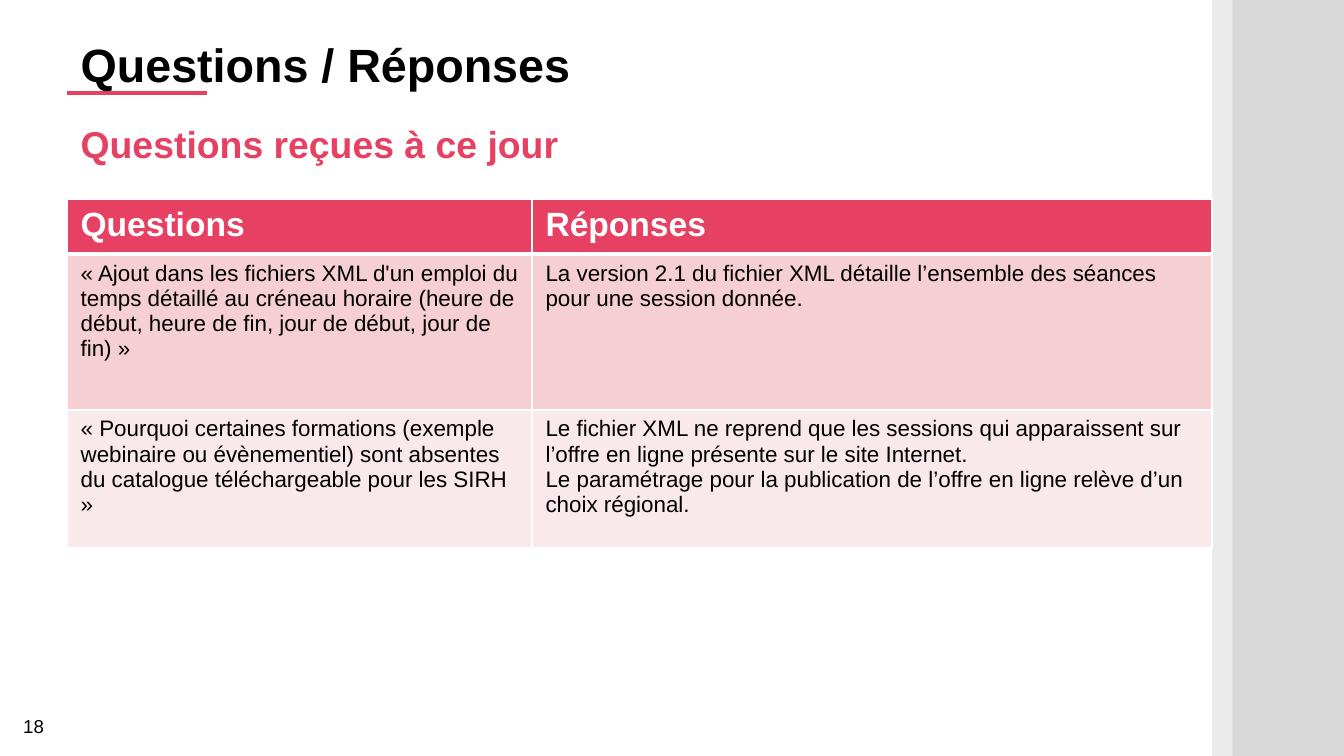
from dataclasses import dataclass

import pptx
import pptx.dml.color
import pptx.enum.shapes
import pptx.enum.text
import pptx.oxml
import pptx.oxml.ns
import pptx.util
from lxml import etree

RGBColor = pptx.dml.color.RGBColor
ROSE = RGBColor(0xE6, 0x41, 0x62)
ROSE_MEDIUM = RGBColor(0xF5, 0xCF, 0xD3)
ROSE_PALE = RGBColor(0xFA, 0xE9, 0xEA)
GREY = RGBColor(0xD9, 0xD9, 0xD9)
BLACK = RGBColor(0, 0, 0)
WHITE = RGBColor(0xFF, 0xFF, 0xFF)
FONT = "Arial"

WIDTH = 10
HEIGHT = WIDTH * 9 / 16
MARGIN = 0.05 * WIDTH
BAND_LEFT = 9.02
BAND_SPLIT = 9.17
QUESTION_SHARE = 0.406


@dataclass(frozen=True)
class Box:
    left: float
    top: float
    width: float
    height: float

    def emu(self) -> list:
        sides = (self.left, self.top, self.width, self.height)
        return [pptx.util.Inches(side) for side in sides]


@dataclass(frozen=True)
class Style:
    size: float
    color: RGBColor
    bold: bool = False


@dataclass(frozen=True)
class TableRow:
    question: str
    answer: str
    height: float
    fill: RGBColor
    style: Style
    rule_below: float = 1


HEADER_STYLE = Style(18, WHITE, True)
ENTRY_STYLE = Style(12, BLACK)
ROWS = [
    TableRow("Questions", "Réponses", 0.41, ROSE, HEADER_STYLE, 3),
    TableRow(
        "« Ajout dans les fichiers XML d'un emploi du temps détaillé au créneau "
        "horaire (heure de début, heure de fin, jour de début, jour de fin) »",
        "La version 2.1 du fichier XML détaille l’ensemble des séances pour une "
        "session donnée.",
        1.16, ROSE_MEDIUM, ENTRY_STYLE),
    TableRow(
        "« Pourquoi certaines formations (exemple webinaire ou évènementiel) sont "
        "absentes du catalogue téléchargeable pour les SIRH »",
        "Le fichier XML ne reprend que les sessions qui apparaissent sur l’offre en "
        "ligne présente sur le site Internet.\n"
        "Le paramétrage pour la publication de l’offre en ligne relève d’un choix "
        "régional.",
        1.03, ROSE_PALE, ENTRY_STYLE),
]


def write(frame, text: str, style: Style, align=pptx.enum.text.PP_ALIGN.LEFT) -> None:
    frame.text = text
    for paragraph in frame.paragraphs:
        paragraph.alignment = align
        for run in paragraph.runs:
            run.font.name = FONT
            run.font.size = pptx.util.Pt(style.size)
            run.font.bold = style.bold
            run.font.color.rgb = style.color


def fill_heading(holder, box: Box, text: str, style: Style) -> None:
    holder.left, holder.top, holder.width, holder.height = box.emu()
    frame = holder.text_frame
    write(frame, text, style)
    frame.word_wrap = True
    frame.auto_size = pptx.enum.text.MSO_AUTO_SIZE.NONE
    frame.vertical_anchor = pptx.enum.text.MSO_ANCHOR.TOP
    paragraph = frame.paragraphs[0]
    paragraph.space_before = pptx.util.Pt(0)
    properties = paragraph._p.get_or_add_pPr()
    properties.set("marL", "0")
    properties.set("indent", "0")
    etree.SubElement(properties, pptx.oxml.ns.qn("a:buNone"))
    # Headings lie in front of the decoration
    holder.element.getparent().append(holder.element)


def add_band(slide, box: Box, opacity: int = 100) -> None:
    band = slide.shapes.add_shape(
        pptx.enum.shapes.MSO_SHAPE.RECTANGLE, *box.emu())
    band.shadow.inherit = False
    band.fill.solid()
    band.fill.fore_color.rgb = GREY
    band.line.fill.background()
    if opacity < 100:
        color = band.element.spPr.find(".//" + pptx.oxml.ns.qn("a:srgbClr"))
        alpha = etree.SubElement(color, pptx.oxml.ns.qn("a:alpha"))
        alpha.set("val", str(opacity * 1000))


def add_rule(slide, left: float, right: float, y: float) -> None:
    ends = [pptx.util.Inches(value) for value in (left, y, right, y)]
    rule = slide.shapes.add_connector(
        pptx.enum.shapes.MSO_CONNECTOR.STRAIGHT, *ends)
    rule.line.color.rgb = ROSE
    rule.line.width = pptx.util.Pt(2.25)
    etree.SubElement(rule.element.spPr, pptx.oxml.ns.qn("a:effectLst"))


def set_borders(cell, top: float, bottom: float) -> None:
    properties = cell._tc.get_or_add_tcPr()
    widths = {"lnL": 1, "lnR": 1, "lnT": top, "lnB": bottom}
    for position, (side, width) in enumerate(widths.items()):
        border = pptx.oxml.parse_xml(
            f'<a:{side} {pptx.oxml.ns.nsdecls("a")} w="{pptx.util.Pt(width)}">'
            f'<a:solidFill><a:srgbClr val="{WHITE}"/></a:solidFill></a:{side}>')
        properties.insert(position, border)


def add_answers_table(slide, left: float, top: float, width: float) -> None:
    box = Box(left, top, width, sum(row.height for row in ROWS))
    table = slide.shapes.add_table(len(ROWS), 2, *box.emu()).table
    for column, share in zip(table.columns, (QUESTION_SHARE, 1 - QUESTION_SHARE)):
        column.width = pptx.util.Inches(width * share)
    rule_above = 1
    for index, row in enumerate(ROWS):
        table.rows[index].height = pptx.util.Inches(row.height)
        for column, text in enumerate((row.question, row.answer)):
            cell = table.cell(index, column)
            write(cell.text_frame, text, row.style)
            cell.fill.solid()
            cell.fill.fore_color.rgb = row.fill
            set_borders(cell, rule_above, row.rule_below)
        rule_above = row.rule_below


def main() -> None:
    deck = pptx.Presentation()
    deck.slide_width = pptx.util.Inches(WIDTH)
    deck.slide_height = pptx.util.Inches(HEIGHT)
    slide = deck.slides.add_slide(deck.slide_layouts[1])
    title, subtitle = slide.placeholders

    # Side bands and title rule
    add_band(slide, Box(BAND_LEFT, 0, 0.16, HEIGHT), opacity=50)
    add_band(slide, Box(BAND_SPLIT, 0, WIDTH - BAND_SPLIT, HEIGHT))
    add_rule(slide, MARGIN, 1.54, 0.69)

    # Page number
    page_number = slide.shapes.add_textbox(*Box(0, 5.27, MARGIN, 0.27).emu())
    page_number.text_frame.word_wrap = True
    write(page_number.text_frame, "18", Style(10, BLACK),
          pptx.enum.text.PP_ALIGN.CENTER)

    # Headings
    fill_heading(subtitle, Box(MARGIN, 0.85, 8.28, 0.47),
                 "Questions reçues à ce jour", Style(20, ROSE, True))
    fill_heading(title, Box(MARGIN, 0.22, 8.44, 0.47),
                 "Questions / Réponses", Style(25, BLACK, True))

    # Questions and answers
    add_answers_table(slide, MARGIN, 1.48, BAND_LEFT - MARGIN)
    deck.save("out.pptx")


if __name__ == "__main__":
    main()
